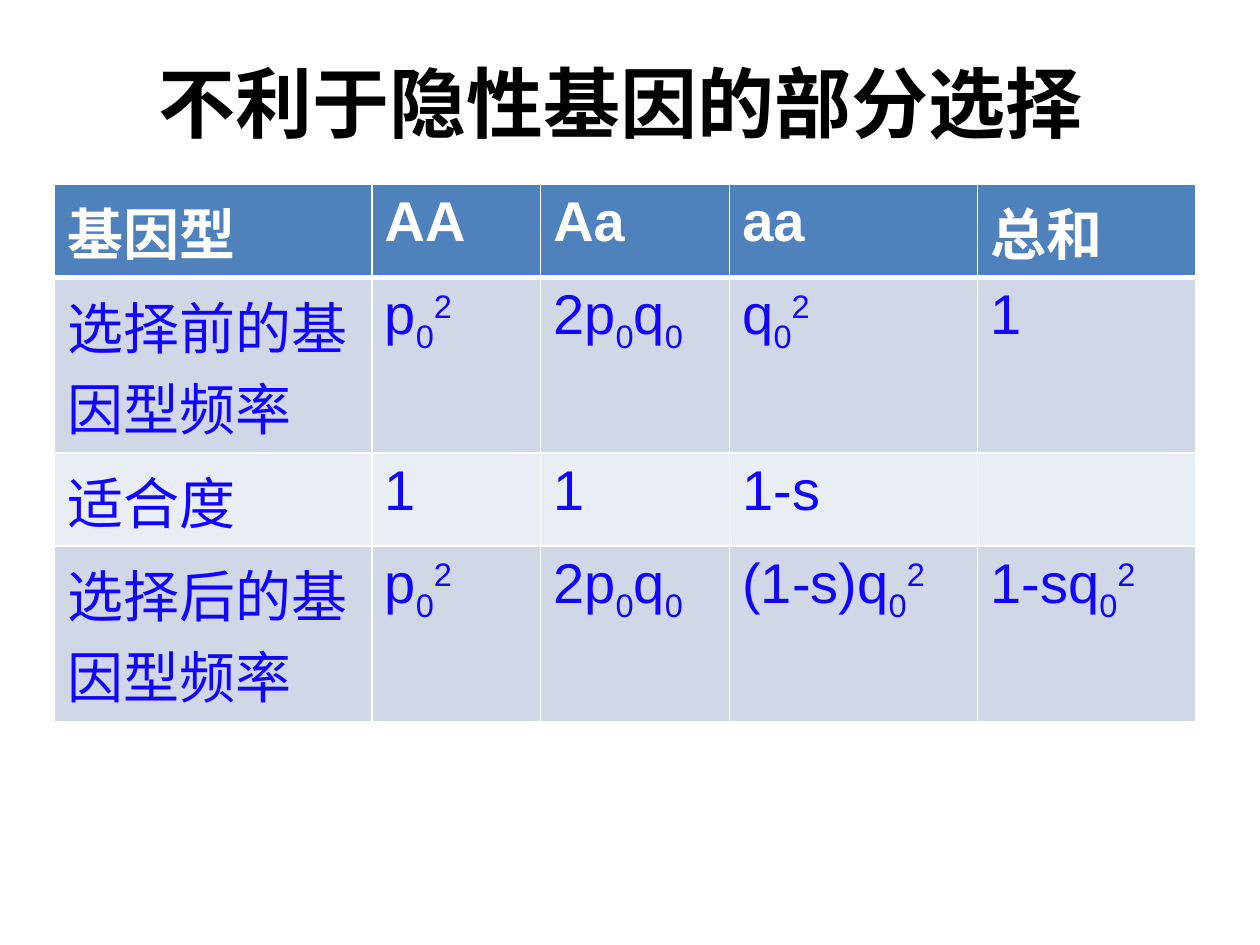
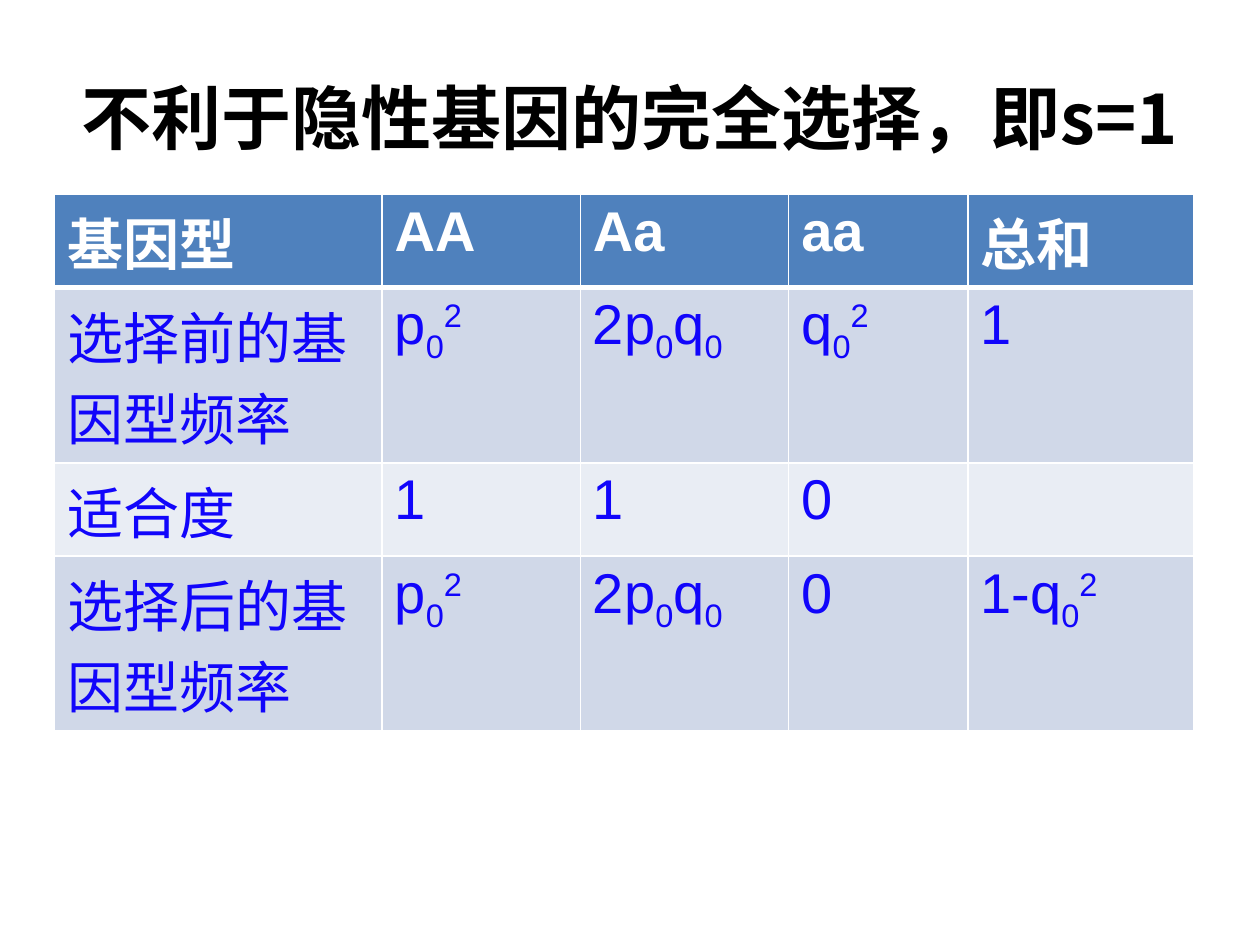
from lxml import etree
from pptx import Presentation
from pptx.dml.color import RGBColor
from pptx.enum.text import MSO_ANCHOR, PP_ALIGN
from pptx.oxml.ns import qn
from pptx.util import Cm, Pt

MIDDLE = MSO_ANCHOR.MIDDLE
CENTER = PP_ALIGN.CENTER

COLORS = {
    "title": "000000",
    "header_text": "FFFFFF",
    "body_text": "1105FB",
    "border": "FFFFFF",
    "header": "4F81BD",
    "dark_band": "D0D8E8",
    "light_band": "E9EDF4",
}
TITLE_FONT = "Noto Sans CJK SC"
TABLE_FONT = "Arial"
TABLE_SIZE = 32
SUBSCRIPT, SUPERSCRIPT = "-25000", "30000"
ONE_LINE, TWO_LINES = 1.88, 3.53
ROW_HEIGHTS = [ONE_LINE, TWO_LINES, ONE_LINE, TWO_LINES]
TABLE_LEFT = 1.1

HEADER = ["基因型", "AA", "Aa", "aa", "总和"]
BEFORE = ["选择前的基因型频率", "p_0^2", "2p_0q_0", "q_0^2", "1"]


def genotype_rows(fitness, affected_after, total_after):
    """Rows of a selection table; only the aa genotype and the total vary."""
    return [
        HEADER,
        BEFORE,
        ["适合度", "1", "1", fitness, ""],
        ["选择后的基因型频率", "p_0^2", "2p_0q_0", affected_after, total_after],
    ]


def style_run(run, name, size, color, bold):
    run.font.name = name
    run.font.size = Pt(size)
    run.font.bold = bold
    run.font.color.rgb = RGBColor.from_string(COLORS[color])
    east_asian = etree.SubElement(run.font._element, qn("a:ea"))
    east_asian.set("typeface", TITLE_FONT)


def split_formula(formula):
    """Yield (text, baseline) pieces; _ lowers and ^ raises the next character."""
    shifts = {"_": SUBSCRIPT, "^": SUPERSCRIPT}
    plain, characters = "", iter(formula)
    for character in characters:
        if character in shifts:
            if plain:
                yield plain, None
            plain = ""
            yield next(characters), shifts[character]
        else:
            plain += character
    if plain:
        yield plain, None


def write_formula(paragraph, formula, color, bold):
    for text, baseline in split_formula(formula):
        run = paragraph.add_run()
        run.text = text
        style_run(run, TABLE_FONT, TABLE_SIZE, color, bold)
        if baseline:
            run.font._element.set("baseline", baseline)


def set_borders(cell, top, bottom):
    """Draw all four cell borders; they must precede the fill in the XML."""
    properties = cell._tc.get_or_add_tcPr()
    widths = {"a:lnL": 1, "a:lnR": 1, "a:lnT": top, "a:lnB": bottom}
    for position, (tag, width) in enumerate(widths.items()):
        line = etree.Element(qn(tag), w=str(Pt(width)))
        fill = etree.SubElement(line, qn("a:solidFill"))
        etree.SubElement(fill, qn("a:srgbClr"), val=COLORS["border"])
        properties.insert(position, line)


def add_title(slide, text, size, height):
    box = slide.shapes.add_textbox(Cm(1.27), Cm(0.76), Cm(22.86), Cm(height))
    frame = box.text_frame
    frame.word_wrap = True
    frame.vertical_anchor = MIDDLE
    frame.text = text
    paragraph = frame.paragraphs[0]
    paragraph.alignment = CENTER
    style_run(paragraph.runs[0], TITLE_FONT, size, "title", True)


def add_genotype_table(slide, rows, top, column_widths):
    frame = slide.shapes.add_table(
        len(rows), len(column_widths), Cm(TABLE_LEFT), Cm(top),
        Cm(sum(column_widths)), Cm(sum(ROW_HEIGHTS)))
    table = frame.table
    for column, width in zip(table.columns, column_widths):
        column.width = Cm(width)
    for index, (row, height, formulas) in enumerate(zip(table.rows, ROW_HEIGHTS, rows)):
        row.height = Cm(height)
        is_header = index == 0
        band = "header" if is_header else "dark_band" if index % 2 else "light_band"
        for cell, formula in zip(row.cells, formulas):
            cell.fill.solid()
            cell.fill.fore_color.rgb = RGBColor.from_string(COLORS[band])
            set_borders(cell, 3 if index == 1 else 1, 3 if is_header else 1)
            write_formula(cell.text_frame.paragraphs[0], formula,
                          "header_text" if is_header else "body_text", is_header)


def main():
    presentation = Presentation()
    presentation.slide_width, presentation.slide_height = Cm(25.4), Cm(19.05)
    blank = presentation.slide_layouts[6]

    partial = presentation.slides.add_slide(blank)
    add_title(partial, "不利于隐性基因的部分选择 ", 44, 2.57)
    add_genotype_table(partial, genotype_rows("1-s", "(1-s)q_0^2", "1-sq_0^2"),
                       3.72, [6.4, 3.4, 3.81, 5, 4.39])

    complete = presentation.slides.add_slide(blank)
    add_title(complete, "不利于隐性基因的完全选择，即s=1 ", 40, 3.18)
    add_genotype_table(complete, genotype_rows("0", "0", "1-q_0^2"),
                       3.92, [6.6, 4, 4.2, 3.61, 4.55])

    presentation.save("out.pptx")


if __name__ == "__main__":
    main()
